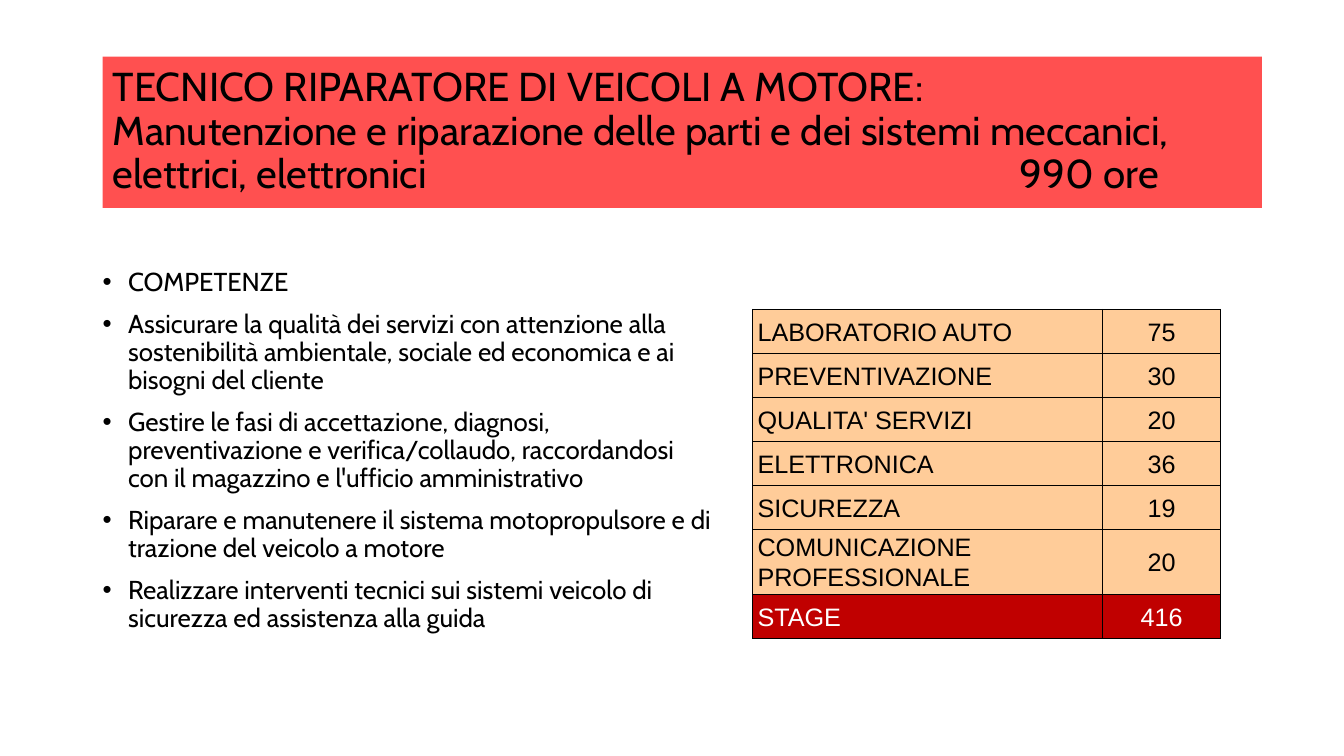
from lxml.etree import SubElement as Sub
from pptx import Presentation
from pptx.dml.color import RGBColor as RGB
from pptx.enum.shapes import MSO_SHAPE as Shape
from pptx.enum.text import MSO_ANCHOR as Anchor, PP_ALIGN as Align
from pptx.oxml import parse_xml as to_xml
from pptx.oxml.ns import nsdecls, qn
from pptx.util import Cm, Pt

hues = {"red": "FF5050", "peach": "FFCC99", "dark": "C00000",
        "black": "000000", "white": "FFFFFF"}


def style(para, font, size, hue, space):
    para.line_spacing = space
    for run in para.runs:
        run.font.name = font
        run.font.size = Pt(size)
        run.font.color.rgb = RGB.from_string(hues[hue])


deck = Presentation()
deck.slide_width, deck.slide_height = Cm(33.87), Cm(19.05)
slide = deck.slides.add_slide(deck.slide_layouts[6])

title = slide.shapes.add_shape(Shape.RECTANGLE, Cm(2.59), Cm(1.43), Cm(29.21), Cm(3.81))
title.shadow.inherit = False
title.fill.solid()
title.fill.fore_color.rgb = RGB.from_string(hues["red"])
title.line.fill.background()
frame = title.text_frame
frame.word_wrap = True
frame.vertical_anchor = Anchor.MIDDLE
head = frame.paragraphs[0]
head.text = ("TECNICO RIPARATORE DI VEICOLI A MOTORE:\v"
             "Manutenzione e riparazione delle parti e dei sistemi meccanici, "
             "elettrici, elettronici\t990 ore")
head.alignment = Align.LEFT
style(head, "Cabin", 28.8, "black", 0.9)
tabs = Sub(head._p.get_or_add_pPr(), qn("a:tabLst"))
Sub(tabs, qn("a:tab"), pos=str(Cm(22.86)), algn="l")

skills = [
    "COMPETENZE",
    "Assicurare la qualità dei servizi con attenzione alla sostenibilità "
    "ambientale, sociale ed economica e ai bisogni del cliente",
    "Gestire le fasi di accettazione, diagnosi, preventivazione e "
    "verifica/collaudo, raccordandosi con il magazzino e l'ufficio amministrativo",
    "Riparare e manutenere il sistema motopropulsore e di trazione del veicolo a motore",
    "Realizzare interventi tecnici sui sistemi veicolo di sicurezza ed "
    "assistenza alla guida",
]
body = slide.shapes.add_textbox(Cm(2.34), Cm(6.65), Cm(16.03), Cm(10.36)).text_frame
body.word_wrap = True
body.text = "\n".join(skills)
for para in body.paragraphs:
    style(para, "Cabin", 18.5, "black", 0.9)
    para.space_before = Pt(10)
    props = para._p.get_or_add_pPr()
    props.set("marL", str(Cm(0.64)))
    props.set("indent", str(-Cm(0.64)))
    Sub(props, qn("a:buFont"), typeface="Arial")
    Sub(props, qn("a:buChar"), char="•")

hours = [
    ("LABORATORIO AUTO", 75),
    ("PREVENTIVAZIONE", 30),
    ("QUALITA' SERVIZI", 20),
    ("ELETTRONICA", 36),
    ("SICUREZZA", 19),
    ("COMUNICAZIONE PROFESSIONALE", 20),
    ("STAGE", 416),
]
high = Cm(1.11)
table = slide.shapes.add_table(len(hours), 2, Cm(18.97), Cm(7.8), Cm(11.79),
                               high * len(hours)).table
table.first_row = table.horz_banding = False
table.columns[0].width, table.columns[1].width = Cm(8.82), Cm(2.97)
for row, items in zip(table.rows, hours):
    row.height = high
    stage = items[0] == "STAGE"
    for cell, item, align in zip(row.cells, items, (Align.LEFT, Align.CENTER)):
        cell.text_frame.text = str(item)
        para = cell.text_frame.paragraphs[0]
        para.alignment = align
        para.space_after = Pt(8)
        style(para, "Arial", 18, "white" if stage else "black", 1.07)
        cell.vertical_anchor = Anchor.MIDDLE
        cell.margin_left = cell.margin_right = Cm(0.12)
        cell.margin_top = cell.margin_bottom = 0
        cell.fill.solid()
        cell.fill.fore_color.rgb = RGB.from_string(hues["dark" if stage else "peach"])
        for spot, side in enumerate("LRTB"):
            edge = to_xml(
                f'<a:ln{side} {nsdecls("a")} w="{Pt(1)}"><a:solidFill>'
                f'<a:srgbClr val="{hues["black"]}"/></a:solidFill></a:ln{side}>')
            cell._tc.get_or_add_tcPr().insert(spot, edge)

deck.save("out.pptx")
